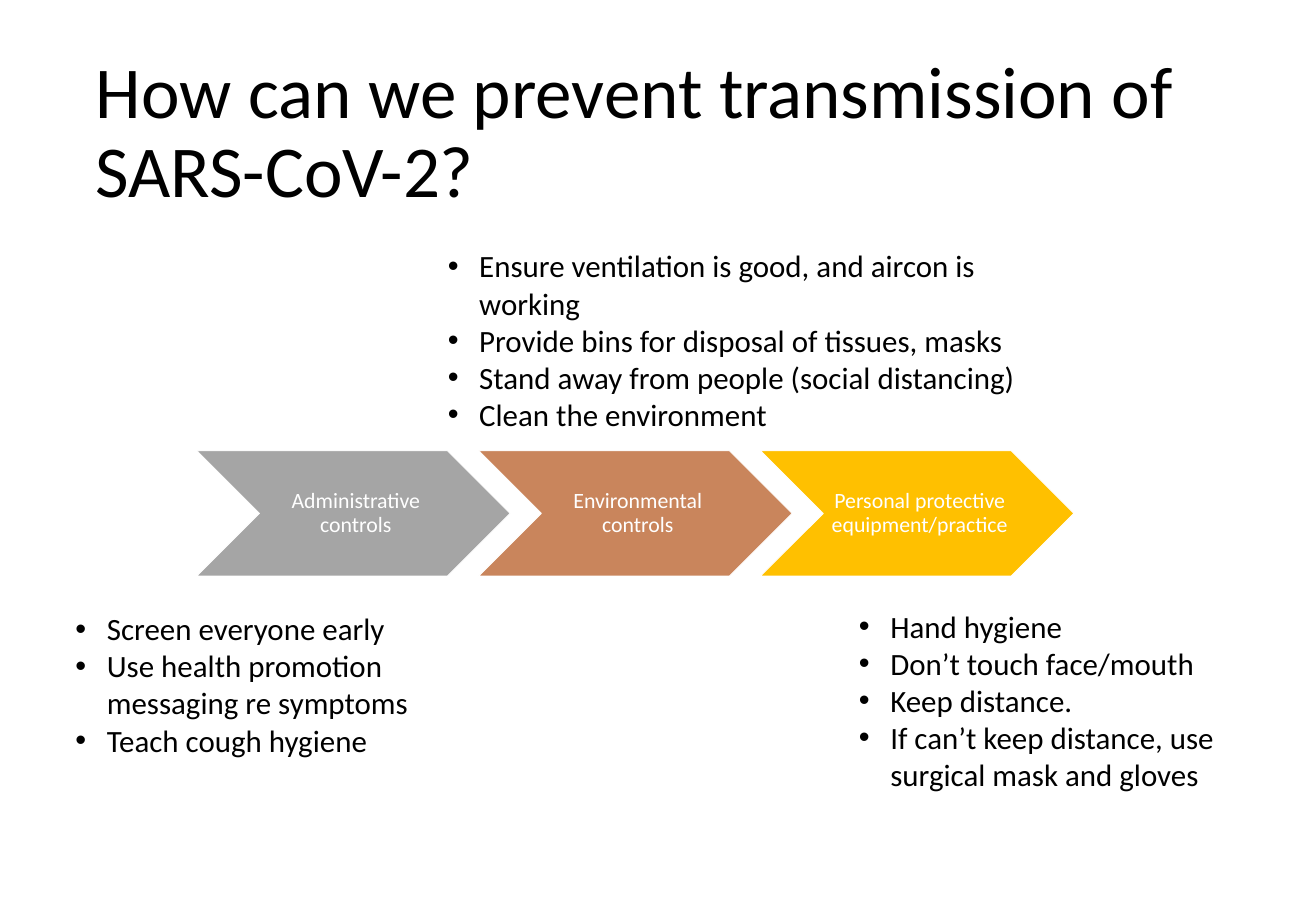
from dataclasses import dataclass

from lxml import etree
from pptx import Presentation
from pptx import util as u
from pptx.dml.color import RGBColor
from pptx.enum import shapes, text
from pptx.oxml import ns

WIDTH, HEIGHT = u.Cm(66), u.Cm(45)


@dataclass(frozen=True)
class Theme:
    font: str = "Calibri"
    ink: str = "000000"
    paper: str = "FFFFFF"
    title_size: float = 103.9
    list_size: float = 44
    step_size: float = 31


THEME = Theme()
TITLE = "How can we prevent transmission of SARS-CoV-2?"
STEPS = [
    ("Administrative controls", "A5A5A5"),
    ("Environmental controls", "C9855C"),
    ("Personal protective equipment/practice", "FFC000"),
]
STEP_LEFT, STEP_PITCH = 14.97, 21.42
MEASURES = [
    ((5.35, 67.7, 30.37, 21.44), [
        "Screen everyone early",
        "Use health promotion messaging re symptoms",
        "Teach cough hygiene",
    ]),
    ((33.64, 27.26, 48, 25.62), [
        "Ensure ventilation is good, and aircon is working",
        "Provide bins for disposal of tissues, masks",
        "Stand away from people (social distancing)",
        "Clean the environment",
    ]),
    ((64.88, 67.42, 28.25, 25.62), [
        "Hand hygiene",
        "Don’t touch face/mouth",
        "Keep distance.",
        "If can’t keep distance, use surgical mask and gloves",
    ]),
]


def area(left, top, width, height):
    return [int(share * side / 100) for share, side in
            zip((left, top, width, height), (WIDTH, HEIGHT, WIDTH, HEIGHT))]


def place(box, shares):
    box.left, box.top, box.width, box.height = area(*shares)


def write(box, lines, size, color, align, anchor, spacing=1.0):
    frame = box.text_frame
    frame.text = "\n".join(lines)
    frame.word_wrap = True
    frame.auto_size = text.MSO_AUTO_SIZE.NONE
    frame.vertical_anchor = anchor
    for para in frame.paragraphs:
        para.alignment = align
        para.line_spacing = spacing
        para.space_before = para.space_after = u.Pt(0)
        for span in para.runs:
            span.font.name = THEME.font
            span.font.size = u.Pt(size)
            span.font.bold = False
            span.font.color.rgb = RGBColor.from_string(color)


def add_bullet(para):
    props = para._p.get_or_add_pPr()
    indent = u.Inches(0.62)
    props.set("marL", str(indent))
    props.set("indent", str(-indent))
    etree.SubElement(props, ns.qn("a:buFont")).set("typeface", "Arial")
    etree.SubElement(props, ns.qn("a:buChar")).set("char", "•")


def fill_title(box):
    place(box, (6.89, 5.3, 86.26, 19.3))
    write(box, [TITLE], THEME.title_size, THEME.ink,
          text.PP_ALIGN.LEFT, text.MSO_ANCHOR.MIDDLE, 0.9)


def fill_list(box, shares, lines):
    place(box, shares)
    write(box, lines, THEME.list_size, THEME.ink,
          text.PP_ALIGN.LEFT, text.MSO_ANCHOR.TOP)
    for para in box.text_frame.paragraphs:
        add_bullet(para)


def add_step(page, column, label, color):
    left = STEP_LEFT + column * STEP_PITCH
    step = page.shapes.add_shape(shapes.MSO_SHAPE.CHEVRON,
                                 *area(left, 50.26, 23.79, 13.95))
    step.shadow.inherit = False
    step.fill.solid()
    step.fill.fore_color.rgb = RGBColor.from_string(color)
    step.line.color.rgb = RGBColor.from_string(THEME.paper)
    step.line.width = u.Pt(1)
    write(step, [label], THEME.step_size, THEME.paper,
          text.PP_ALIGN.CENTER, text.MSO_ANCHOR.MIDDLE, 0.9)
    frame = step.text_frame
    frame.margin_left = u.Inches(0.14)
    frame.margin_top = frame.margin_right = frame.margin_bottom = u.Inches(0.05)


def main():
    deck = Presentation()
    deck.slide_width, deck.slide_height = WIDTH, HEIGHT
    page = deck.slides.add_slide(deck.slide_layouts.get_by_name("Comparison"))
    title, *bodies = page.placeholders
    fill_title(title)
    for column, (label, color) in enumerate(STEPS):
        add_step(page, column, label, color)
    for body, (shares, lines) in zip(bodies, MEASURES):
        fill_list(body, shares, lines)
    for spare in bodies[len(MEASURES):]:
        spare.element.getparent().remove(spare.element)
    deck.save("out.pptx")


if __name__ == "__main__":
    main()
